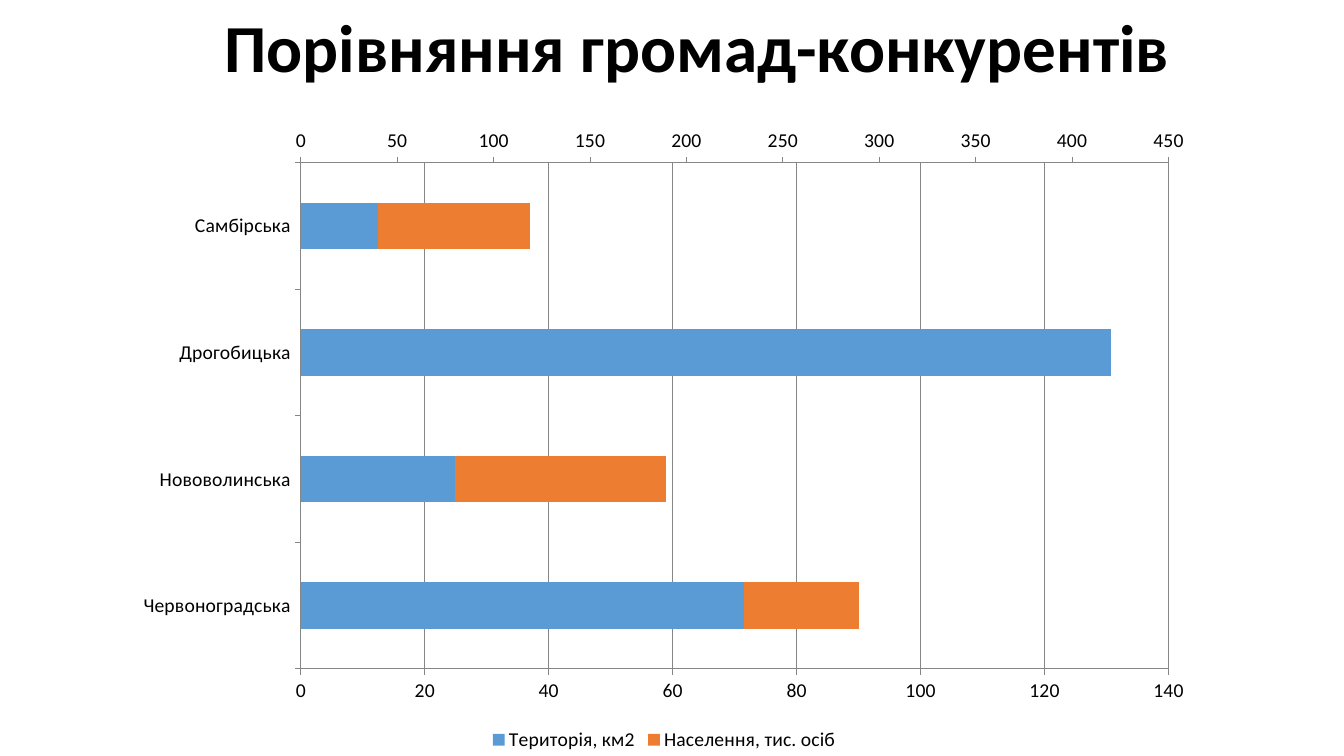
from copy import deepcopy
from dataclasses import dataclass

from pptx import Presentation
from pptx.chart.data import CategoryChartData
from pptx.dml.color import RGBColor
from pptx.enum.chart import XL_CHART_TYPE, XL_LEGEND_POSITION, XL_TICK_MARK
from pptx.enum.text import MSO_ANCHOR, PP_ALIGN
from pptx.oxml import parse_xml
from pptx.oxml.ns import nsdecls, qn
from pptx.util import Pt

COLORS = {"text": "000000", "line": "868686", "area": "5B9BD5", "people": "ED7D31"}
FONT = "Calibri"
COMMUNITIES = ["Червоноградська", "Нововолинська", "Дрогобицька", "Самбірська"]


@dataclass
class Box:
    left: float
    top: float
    width: float
    height: float

    def lengths(self) -> list:
        return [Pt(v) for v in (self.left, self.top, self.width, self.height)]


@dataclass
class Measure:
    name: str
    color: str
    values: list


MEASURES = [
    Measure("Територія, км2", "area", [230, 80, 420, 40]),
    Measure("Населення, тис. осіб", "people", [90, 59, 123, 37]),
]
TITLE_BOX = Box(67, 6.5, 862, 59)
CHART_BOX = Box(87.1, 83.5, 774.7, 456.5)
PLOT = {"x": 0.165, "y": 0.072, "w": 0.8, "h": 0.792}


def rgb(name: str) -> RGBColor:
    return RGBColor.from_string(COLORS[name])


def set_attrs(obj, values: dict) -> None:
    for name, value in values.items():
        setattr(obj, name, value)


def set_font(font, size: float, bold: bool = False) -> None:
    set_attrs(font, {"name": FONT, "size": Pt(size), "bold": bold})
    font.color.rgb = rgb("text")


def add_title(s, text: str, box: Box) -> None:
    tf = s.shapes.add_textbox(*box.lengths()).text_frame
    set_attrs(tf, {"word_wrap": True, "vertical_anchor": MSO_ANCHOR.MIDDLE})
    p = tf.paragraphs[0]
    set_attrs(p, {"alignment": PP_ALIGN.CENTER, "line_spacing": 0.9})
    r = p.add_run()
    r.text = text
    set_font(r.font, 48, True)


def format_axis(axis) -> None:
    set_attrs(axis, {"major_tick_mark": XL_TICK_MARK.OUTSIDE,
                     "minor_tick_mark": XL_TICK_MARK.NONE})
    set_font(axis.tick_labels.font, 14)
    axis.format.line.color.rgb = rgb("line")
    axis.format.line.width = Pt(0.75)


def set_plot_layout(area) -> None:
    for old in area.findall(qn("c:layout")):
        area.remove(old)
    sizes = "".join(f'<c:{k} val="{v}"/>' for k, v in PLOT.items())
    area.insert(0, parse_xml(
        f'<c:layout {nsdecls("c")}><c:manualLayout><c:layoutTarget val="inner"/>'
        f'<c:xMode val="edge"/><c:yMode val="edge"/>{sizes}</c:manualLayout></c:layout>'))


def move_first_to_top_axis(area) -> None:
    """Plot the first series against a second value axis along the top."""
    bars = area.find(qn("c:barChart"))
    top_bars = deepcopy(bars)
    bars.addnext(top_bars)
    first, _ = bars.findall(qn("c:ser"))
    bars.remove(first)
    _, second = top_bars.findall(qn("c:ser"))
    top_bars.remove(second)

    cat, val = area.find(qn("c:catAx")), area.find(qn("c:valAx"))
    top_cat, top_val = deepcopy(cat), deepcopy(val)
    val.addnext(top_val)
    top_val.addnext(top_cat)
    ids = {cat.find(qn("c:axId")).get("val"): "50010",
           val.find(qn("c:axId")).get("val"): "50020"}
    for part in (top_bars, top_cat, top_val):
        for tag in ("c:axId", "c:crossAx"):
            for el in part.findall(qn(tag)):
                el.set("val", ids[el.get("val")])
    top_cat.find(qn("c:delete")).set("val", "1")
    top_val.find(qn("c:axPos")).set("val", "t")
    top_val.find(qn("c:crosses")).set("val", "max")
    top_val.remove(top_val.find(qn("c:majorGridlines")))
    top_val.find(qn("c:scaling")).find(qn("c:max")).set("val", "450")
    top_val.find(qn("c:majorUnit")).set("val", "50")


def add_comparison(s, box: Box) -> None:
    data = CategoryChartData(number_format="General")
    data.categories = COMMUNITIES
    for m in MEASURES:
        data.add_series(m.name, m.values)
    chart = s.shapes.add_chart(XL_CHART_TYPE.BAR_CLUSTERED, *box.lengths(), data).chart
    set_attrs(chart, {"has_title": False, "has_legend": True})
    set_font(chart.font, 10)

    # Bars
    plot = chart.plots[0]
    set_attrs(plot, {"gap_width": 171, "overlap": 100, "vary_by_categories": False})
    for series, m in zip(plot.series, MEASURES):
        series.format.fill.solid()
        series.format.fill.fore_color.rgb = rgb(m.color)

    # Axes
    format_axis(chart.category_axis)
    axis = chart.value_axis
    format_axis(axis)
    set_attrs(axis, {"minimum_scale": 0, "maximum_scale": 140, "major_unit": 20,
                     "has_major_gridlines": True})
    axis.major_gridlines.format.line.color.rgb = rgb("line")
    axis.major_gridlines.format.line.width = Pt(0.75)

    # Legend
    set_attrs(chart.legend, {"position": XL_LEGEND_POSITION.BOTTOM,
                             "include_in_layout": False})
    set_font(chart.legend.font, 14)

    # Top axis and plot area
    area = plot._element.getparent()
    move_first_to_top_axis(area)
    set_plot_layout(area)


def main() -> None:
    prs = Presentation()
    set_attrs(prs, {"slide_width": Pt(960), "slide_height": Pt(540)})
    s = prs.slides.add_slide(prs.slide_layouts[6])
    add_title(s, "Порівняння громад-конкурентів", TITLE_BOX)
    add_comparison(s, CHART_BOX)
    prs.save("out.pptx")


if __name__ == "__main__":
    main()
